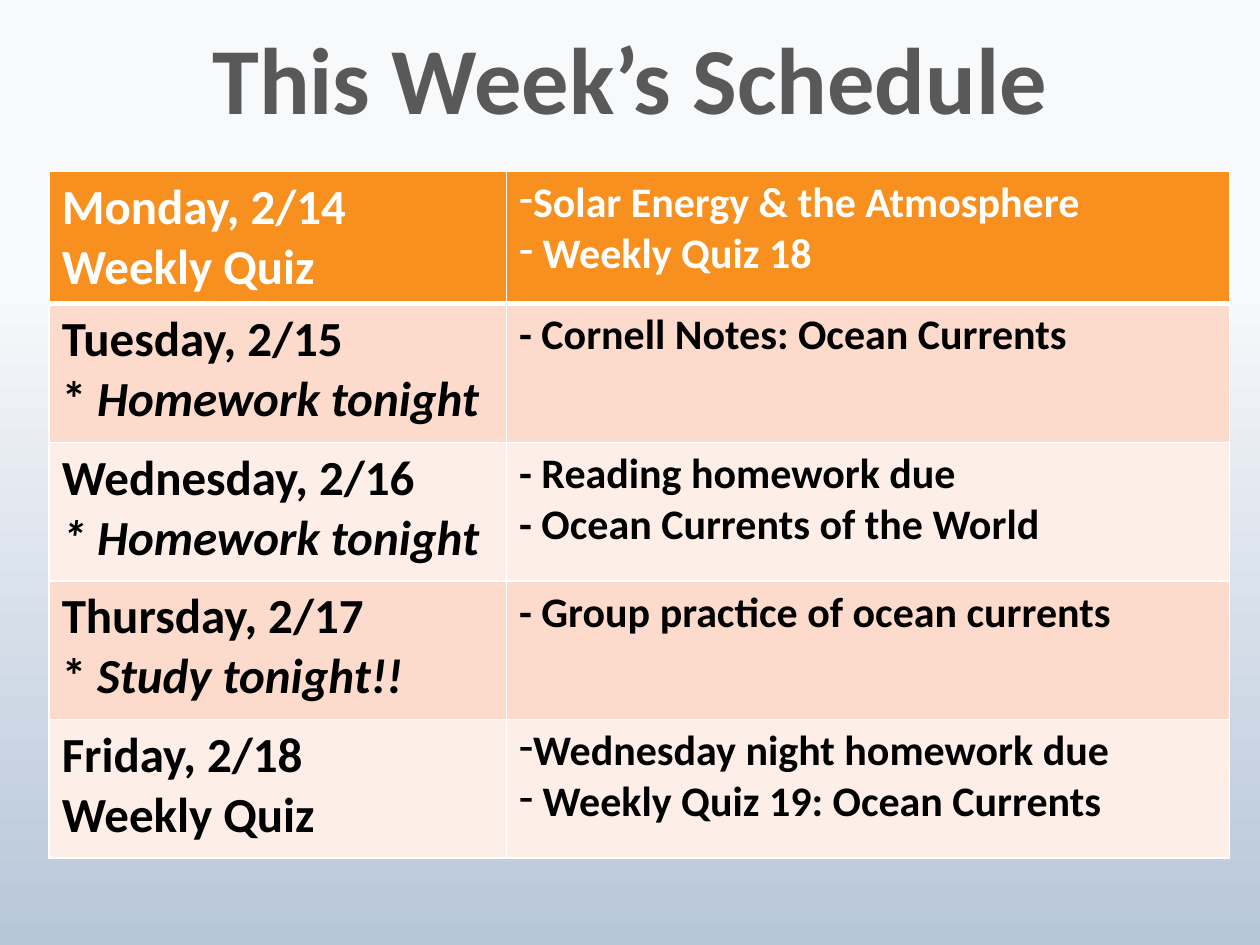
from lxml.etree import SubElement as Sub
from pptx import Presentation
from pptx.dml.color import RGBColor as RGB
from pptx.enum.text import MSO_ANCHOR as Anchor, PP_ALIGN as Align
from pptx.oxml.ns import qn
from pptx.util import Inches, Pt

WHITE = RGB(0xFF, 0xFF, 0xFF)
BLACK = RGB(0, 0, 0)
ORANGE = RGB(0xF7, 0x90, 0x1E)
PEACH = RGB(0xFC, 0xDB, 0xCD)
CREAM = RGB(0xFD, 0xEE, 0xE8)
SKY = [(0.3, RGB(0xF7, 0xF9, 0xFB)), (1, RGB(0xB7, 0xC6, 0xD9))]
GREY = [(0.5, RGB(0x59, 0x59, 0x59)), (1, RGB(0x26, 0x26, 0x26))]

TITLE = "This Week’s Schedule"
DASH = "bullet"
DAYS = [
    (["Monday, 2/14", "Weekly Quiz"],
     [(DASH, "Solar Energy & the Atmosphere"), (DASH, " Weekly Quiz 18")]),
    (["Tuesday, 2/15", ("*", " Homework tonight")],
     ["- Cornell Notes: Ocean Currents"]),
    (["Wednesday, 2/16", ("", "* Homework tonight")],
     ["- Reading homework due", "- Ocean Currents of the World"]),
    (["Thursday, 2/17", ("*", " Study tonight!!")],
     ["- Group practice of ocean currents"]),
    (["Friday, 2/18", "Weekly Quiz"],
     [(DASH, "Wednesday night homework due"),
      (DASH, " Weekly Quiz 19: Ocean Currents")]),
]
COLS = [3.63, 5.74]
ROWS = [0.96] + [1.1] * 4
SIZES = [28, 24]


def style(obj, vals):
    for key, val in vals.items():
        setattr(obj, key, val)


def blend(fill, stops):
    fill.gradient()
    fill.gradient_angle = 270
    for stop, (pos, tint) in zip(fill.gradient_stops, stops):
        stop.position = pos
        stop.color.rgb = tint


def write(para, text, size, tint, slant=False):
    run = para.add_run()
    run.text = text
    style(run.font, dict(name="Calibri", size=Pt(size), bold=True, italic=slant))
    run.font.color.rgb = tint


def bullet(para):
    props = para._p.get_or_add_pPr()
    props.set("marL", "0")
    props.set("indent", "0")
    Sub(props, qn("a:buFontTx"))
    Sub(props, qn("a:buChar"), char="-")


def border(cell, row):
    props = cell._tc.get_or_add_tcPr()
    thick = {0: "B", 1: "T"}.get(row)
    for side in "LRTB":
        width = 3 if side == thick else 1
        line = Sub(props, qn("a:ln" + side), w=str(Pt(width)))
        Sub(Sub(line, qn("a:solidFill")), qn("a:srgbClr"), val=str(WHITE))


def fill_cell(cell, row, lines, size):
    border(cell, row)
    cell.fill.solid()
    cell.fill.fore_color.rgb = ORANGE if row == 0 else (CREAM, PEACH)[row % 2]
    tint = WHITE if row == 0 else BLACK
    frame = cell.text_frame
    for i, line in enumerate(lines):
        para = frame.add_paragraph() if i else frame.paragraphs[0]
        if isinstance(line, str):
            write(para, line, size, tint)
            continue
        lead, text = line
        if lead == DASH:
            bullet(para)
        elif lead:
            write(para, lead, size, tint)
        write(para, text, size, tint, lead != DASH)


def main():
    prs = Presentation()
    style(prs, dict(slide_width=Inches(10), slide_height=Inches(7.5)))
    slide = prs.slides.add_slide(prs.slide_layouts[5])
    blend(slide.background.fill, SKY)

    head = slide.shapes.title
    style(head, dict(left=0, top=Inches(-0.02), width=prs.slide_width,
                     height=Inches(1.38)))
    head.text_frame.vertical_anchor = Anchor.MIDDLE
    para = head.text_frame.paragraphs[0]
    style(para, dict(text=TITLE, alignment=Align.CENTER, line_spacing=Pt(56)))
    font = para.runs[0].font
    style(font, dict(name="Calibri", size=Pt(54), bold=True))
    blend(font.fill, GREY)

    table = slide.shapes.add_table(
        len(ROWS), len(COLS), Inches(0.39), Inches(1.36),
        Inches(sum(COLS)), Inches(sum(ROWS))).table
    for col, width in zip(table.columns, COLS):
        col.width = Inches(width)
    for r, (day, height) in enumerate(zip(DAYS, ROWS)):
        table.rows[r].height = Inches(height)
        for c, lines in enumerate(day):
            fill_cell(table.cell(r, c), r, lines, SIZES[c])
    prs.save("out.pptx")


if __name__ == "__main__":
    main()
